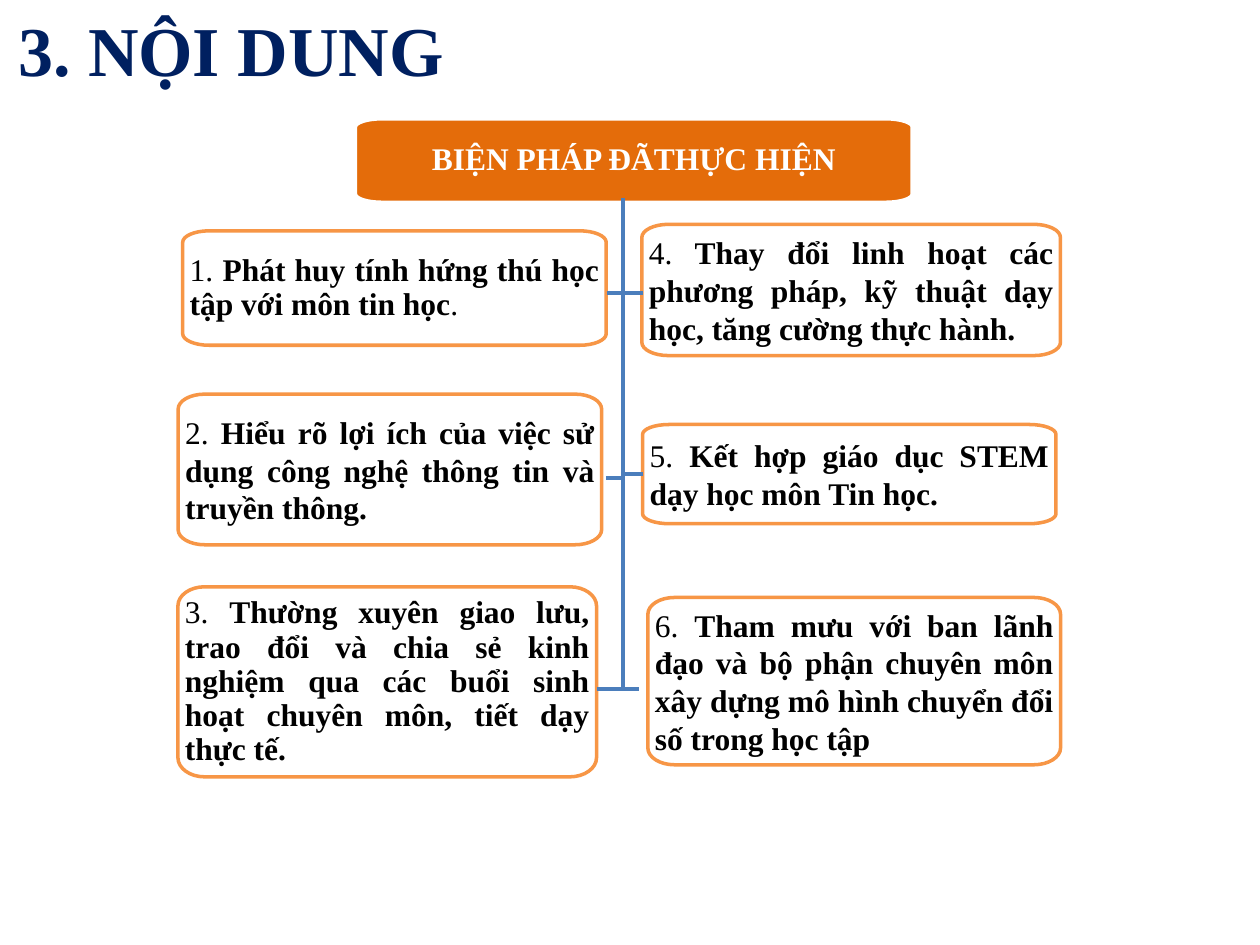
"""Build the slide showing six teaching measures joined to one heading."""
import pptx
import pptx.dml.color
import pptx.enum.shapes
import pptx.enum.text
import pptx.oxml.ns
import pptx.util
from lxml import etree

Pt = pptx.util.Pt
RGBColor = pptx.dml.color.RGBColor
ALIGN = pptx.enum.text.PP_ALIGN
ANCHOR = pptx.enum.text.MSO_ANCHOR
AUTO_SIZE = pptx.enum.text.MSO_AUTO_SIZE
qn = pptx.oxml.ns.qn

NAVY = RGBColor(0x00, 0x20, 0x60)
ORANGE = RGBColor(0xE4, 0x6C, 0x0A)
LIGHT_ORANGE = RGBColor(0xF7, 0x96, 0x46)
BLUE = RGBColor(0x4B, 0x7E, 0xBC)
WHITE = RGBColor(0xFF, 0xFF, 0xFF)
BLACK = RGBColor(0x00, 0x00, 0x00)

FONT = "Times New Roman"
CORNER_WIDTH = 15.2
CORNER_RATIO = 0.1
CURVE_PULL = 0.55

MEASURES = [
    ((104.4, 131.9, 242, 65.4), 0.9,
     [("1. ", False), ("Phát huy tính hứng thú học tập với môn tin học", True), (".", False)]),
    ((101.8, 225.2, 242, 86.1), None,
     [("2. ", False),
      ("Hiểu rõ lợi ích của việc sử dụng công nghệ thông tin và truyền thông.", True)]),
    ((101.7, 335.3, 239.2, 108.6), 0.9,
     [("3. ", False),
      ("Thường xuyên giao lưu, trao đổi và chia sẻ kinh nghiệm qua các buổi sinh hoạt "
       "chuyên môn, tiết dạy thực tế.", True)]),
    ((366.8, 128.2, 239.2, 75), None,
     [("4.", False),
      (" Thay đổi linh hoạt các phương pháp, kỹ thuật dạy học, tăng cường thực hành.", True)]),
    ((367.2, 242.6, 236.2, 56.7), None,
     [("5. ", False), ("Kết hợp giáo dục STEM dạy học môn Tin học.", True)]),
    ((370.2, 341.4, 235.8, 95.6), None,
     [("6. ", False),
      ("Tham mưu với ban lãnh đạo và bộ phận chuyên môn xây dựng mô hình chuyển đổi số "
       "trong học tập", True)]),
]

TRUNK_X = 356
LINKS = [
    (TRUNK_X, 113, TRUNK_X, 393.8),
    (341.3, 393.8, 365, 393.8),
    (346.3, 272.9, TRUNK_X, 272.9),
    (357, 270.7, 367.2, 270.7),
    (357, 167.3, 367.2, 167.3),
    (347, 167.3, 357, 167.3),
]


def write_text(frame, runs, size=18, color=BLACK, align=ALIGN.JUSTIFY,
               spacing=None, anchor=ANCHOR.MIDDLE, margins=(4, 4)):
    """Write (text, bold) runs as one formatted paragraph."""
    frame.word_wrap = True
    frame.vertical_anchor = anchor
    frame.margin_left = frame.margin_right = Pt(margins[0])
    frame.margin_top = frame.margin_bottom = Pt(margins[1])
    paragraph = frame.paragraphs[0]
    paragraph.alignment = align
    paragraph.line_spacing = spacing
    for text, bold in runs:
        run = paragraph.add_run()
        run.text = text
        run.font.name = FONT
        run.font.size = Pt(size)
        run.font.bold = bold
        run.font.color.rgb = color


def bevelled_outline(left, top, width, height):
    """Return the corner ends of a box, clockwise from its upper left side."""
    rx, ry = CORNER_WIDTH, height * CORNER_RATIO
    right, bottom = left + width, top + height
    corner_ends = [
        (left, top + ry), (left + rx, top), (right - rx, top), (right, top + ry),
        (right, bottom - ry), (right - rx, bottom), (left + rx, bottom), (left, bottom - ry),
    ]
    return [(Pt(x), Pt(y)) for x, y in corner_ends + corner_ends[:1]]


def curve_corners(box):
    """Turn every other segment of a bevelled outline into a corner curve."""
    ends = [(int(pt.get("x")), int(pt.get("y"))) for pt in box._element.iter(qn("a:pt"))]
    segments = list(box._element.iter(qn("a:lnTo")))
    for index in range(0, len(segments), 2):
        start, end = ends[index], ends[index + 1]
        corner = (start[0], end[1]) if index % 4 == 0 else (end[0], start[1])
        segment = segments[index]
        segment.clear()
        curve = etree.Element(qn("a:cubicBezTo"))
        segment.getparent().replace(segment, curve)
        pulls = [tuple(round(a + CURVE_PULL * (c - a)) for a, c in zip(point, corner))
                 for point in (start, end)]
        for x, y in [*pulls, end]:
            etree.SubElement(curve, qn("a:pt"), x=str(x), y=str(y))


def add_box(slide, bounds, runs, fill=WHITE, outline=LIGHT_ORANGE, **text_format):
    """Add a rounded box holding formatted text."""
    start, *rest = bevelled_outline(*bounds)
    builder = slide.shapes.build_freeform(*start)
    builder.add_line_segments(rest, close=True)
    box = builder.convert_to_shape()
    curve_corners(box)
    box.shadow.inherit = False
    box.fill.solid()
    box.fill.fore_color.rgb = fill
    box.line.color.rgb = outline
    box.line.width = Pt(2)
    write_text(box.text_frame, runs, **text_format)


def add_link(slide, ends):
    """Add a straight blue link between two points."""
    link = slide.shapes.add_connector(
        pptx.enum.shapes.MSO_CONNECTOR.STRAIGHT, *(Pt(value) for value in ends))
    link.line.color.rgb = BLUE
    link.line.width = Pt(2.25)
    etree.SubElement(link._element.spPr, qn("a:effectLst"))


def add_title(slide, bounds, text):
    """Add the slide title."""
    title = slide.shapes.add_textbox(*(Pt(value) for value in bounds))
    write_text(title.text_frame, [(text, True)], size=40, color=NAVY,
               align=ALIGN.CENTER, anchor=ANCHOR.TOP, margins=(7.2, 3.6))
    title.text_frame.auto_size = AUTO_SIZE.SHAPE_TO_FIT_TEXT


def main():
    """Build and save the slide."""
    deck = pptx.Presentation()
    deck.slide_width, deck.slide_height = Pt(720), Pt(540)
    slide = deck.slides.add_slide(deck.slide_layouts[6])
    add_box(slide, (203.1, 67.9, 318.2, 47.7), [(" BIỆN PHÁP ĐÃTHỰC HIỆN ", True)],
            fill=ORANGE, outline=WHITE, color=WHITE, align=ALIGN.CENTER,
            spacing=0.9, margins=(5.8, 4.3))
    for bounds, spacing, runs in MEASURES:
        add_box(slide, bounds, runs, spacing=spacing)
    for ends in LINKS:
        add_link(slide, ends)
    add_title(slide, (-12, 0, 288, 55.7), "3. NỘI DUNG")
    deck.save("out.pptx")


if __name__ == "__main__":
    main()
